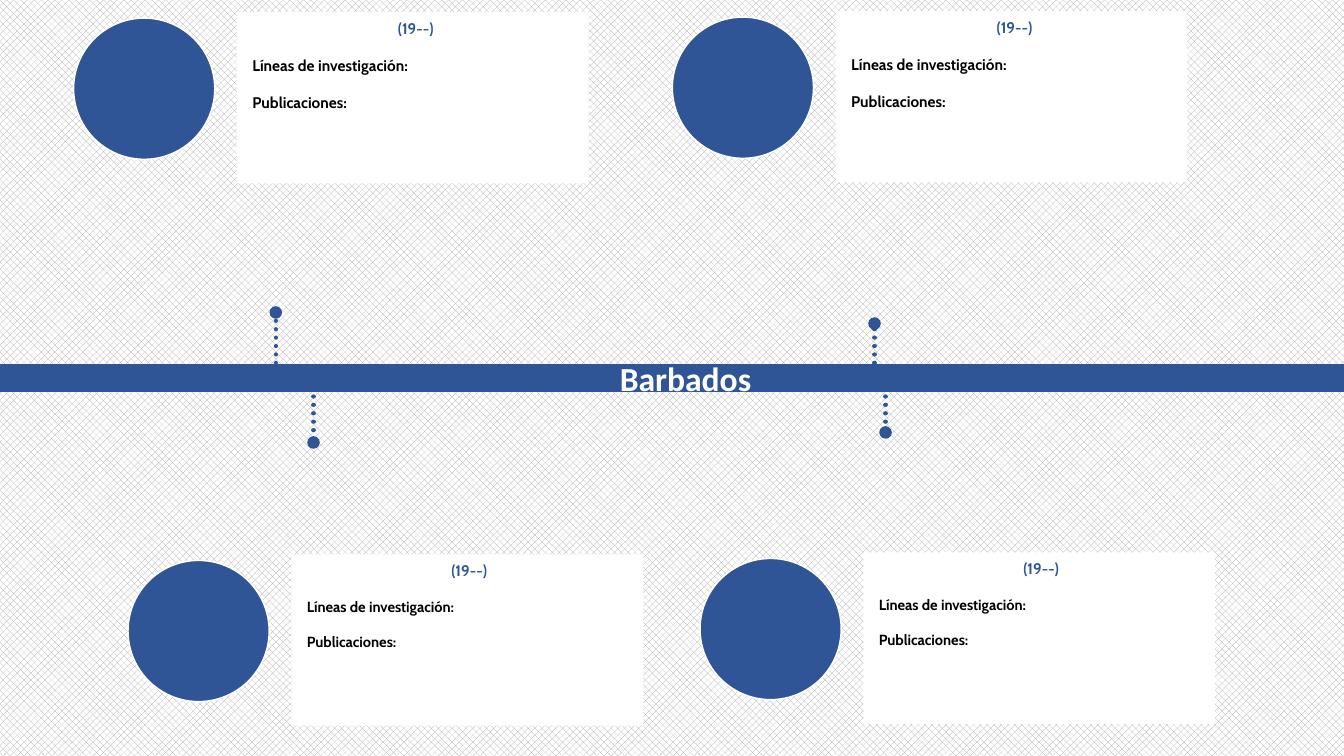
from dataclasses import dataclass

from lxml.etree import SubElement
from pptx import Presentation
from pptx.dml.color import RGBColor
from pptx.enum.dml import MSO_LINE, MSO_PATTERN
from pptx.enum.shapes import MSO_CONNECTOR as Connector, MSO_SHAPE as Shape
from pptx.enum.text import MSO_AUTO_SIZE as AutoSize, PP_ALIGN as Align
from pptx.oxml.ns import qn
from pptx.util import Inches, Pt

WIDTH, HEIGHT = Inches(13.333), Inches(7.5)


@dataclass(frozen=True)
class Theme:
    blue: str = "2F5597"
    white: str = "FFFFFF"
    black: str = "000000"
    hatch: str = "A6A6A6"
    body_font: str = "Cabin"
    title_font: str = "Calibri"
    date_size: float = 11
    title_size: float = 24
    line_height: float = 1.215


THEME = Theme()

# Shares of the slide, in percent of its width or height
PANEL_SIZE = (26.18, 22.67)
PANEL_OFFSET = 12.15
CIRCLE_SIZE = (10.5, 18.67)
CIRCLE_DROP = 0.8
TEXT_INSET = (0.41, 0.23)
TEXT_SIZE = (25.43, 18.2)
BAND_MIDDLE = 50

# Per row: pin offset from the circle, pin start, body size, date indent
ROWS = {
    "top": (15.04, 48, 11, 0.05),
    "bottom": (13.8, 51.33, 10.5, 0.03),
}
# Row, circle left, panel top, pin tip
RESEARCHERS = [
    ("top", 5.48, 1.6, 41.33),
    ("bottom", 9.53, 73.33, 58.53),
    ("top", 50.03, 1.47, 42.8),
    ("bottom", 52.09, 73.07, 57.2),
]


def across(share):
    return round(WIDTH * share / 100)


def down(share):
    return round(HEIGHT * share / 100)


def color(value):
    return RGBColor.from_string(value)


def paint_background(slide):
    fill = slide.background.fill
    fill.patterned()
    fill.pattern = MSO_PATTERN.PERCENT_50
    fill.fore_color.rgb = color(THEME.hatch)
    fill.back_color.rgb = color(THEME.white)


def add_block(slide, kind, left, top, size, fill, outline=None):
    shape = slide.shapes.add_shape(
        kind, across(left), down(top), across(size[0]), down(size[1]))
    shape.shadow.inherit = False
    shape.fill.solid()
    shape.fill.fore_color.rgb = color(fill)
    if outline:
        shape.line.color.rgb = color(outline)
        shape.line.width = Pt(1)
    else:
        shape.line.fill.background()


def add_line(slide, start, end, width):
    line = slide.shapes.add_connector(
        Connector.STRAIGHT, across(start[0]), down(start[1]),
        across(end[0]), down(end[1]))
    line.line.color.rgb = color(THEME.blue)
    line.line.width = Pt(width)
    SubElement(line._element.spPr, qn("a:effectLst"))
    return line


def add_pin(slide, x, start, tip):
    """Dotted line from the band to a round head."""
    pin = add_line(slide, (x, start), (x, tip), 3)
    pin.line.dash_style = MSO_LINE.ROUND_DOT
    outline = pin.line._get_or_add_ln()
    outline.set("cap", "rnd")
    SubElement(outline, qn("a:tailEnd"), type="oval")


def add_text_box(slide, left, top, size, wrap=True):
    box = slide.shapes.add_textbox(
        across(left), down(top), across(size[0]), down(size[1]))
    frame = box.text_frame
    frame.word_wrap = wrap
    frame.auto_size = AutoSize.SHAPE_TO_FIT_TEXT
    return frame


def write(paragraph, text, size, ink=THEME.black, font=THEME.body_font,
          align=Align.LEFT, before=0, indent=0):
    paragraph.alignment = align
    paragraph.space_before = Pt(before)
    if indent:
        paragraph._p.get_or_add_pPr().set("marL", str(Inches(indent)))
    run = paragraph.add_run()
    run.text = text
    run.font.name = font
    run.font.size = Pt(size)
    run.font.bold = True
    run.font.color.rgb = color(ink)


def add_researcher(slide, row, left, top, tip):
    pin_offset, pin_start, body_size, date_indent = ROWS[row]
    panel_left = left + PANEL_OFFSET
    add_pin(slide, left + pin_offset, pin_start, tip)
    add_block(slide, Shape.RECTANGLE, panel_left, top, PANEL_SIZE, THEME.white)
    frame = add_text_box(slide, panel_left + TEXT_INSET[0],
                         top + TEXT_INSET[1], TEXT_SIZE)
    write(frame.paragraphs[0], "(19--)", THEME.date_size, ink=THEME.blue,
          align=Align.CENTER, indent=date_indent)
    for label in ("Líneas de investigación:", "Publicaciones:"):
        write(frame.add_paragraph(), label, body_size,
              before=body_size * THEME.line_height)
    add_block(slide, Shape.OVAL, left, top + CIRCLE_DROP, CIRCLE_SIZE,
              THEME.blue, outline=THEME.white)


def main():
    presentation = Presentation()
    presentation.slide_width, presentation.slide_height = WIDTH, HEIGHT
    slide = presentation.slides.add_slide(presentation.slide_layouts[6])
    paint_background(slide)
    add_line(slide, (0, BAND_MIDDLE), (100, BAND_MIDDLE), 20)
    for researcher in RESEARCHERS:
        add_researcher(slide, *researcher)
    title = add_text_box(slide, 45.38, 46.67, (12.08, 6.67))
    write(title.paragraphs[0], "Barbados", THEME.title_size,
          ink=THEME.white, font=THEME.title_font)
    presentation.save("out.pptx")


if __name__ == "__main__":
    main()
